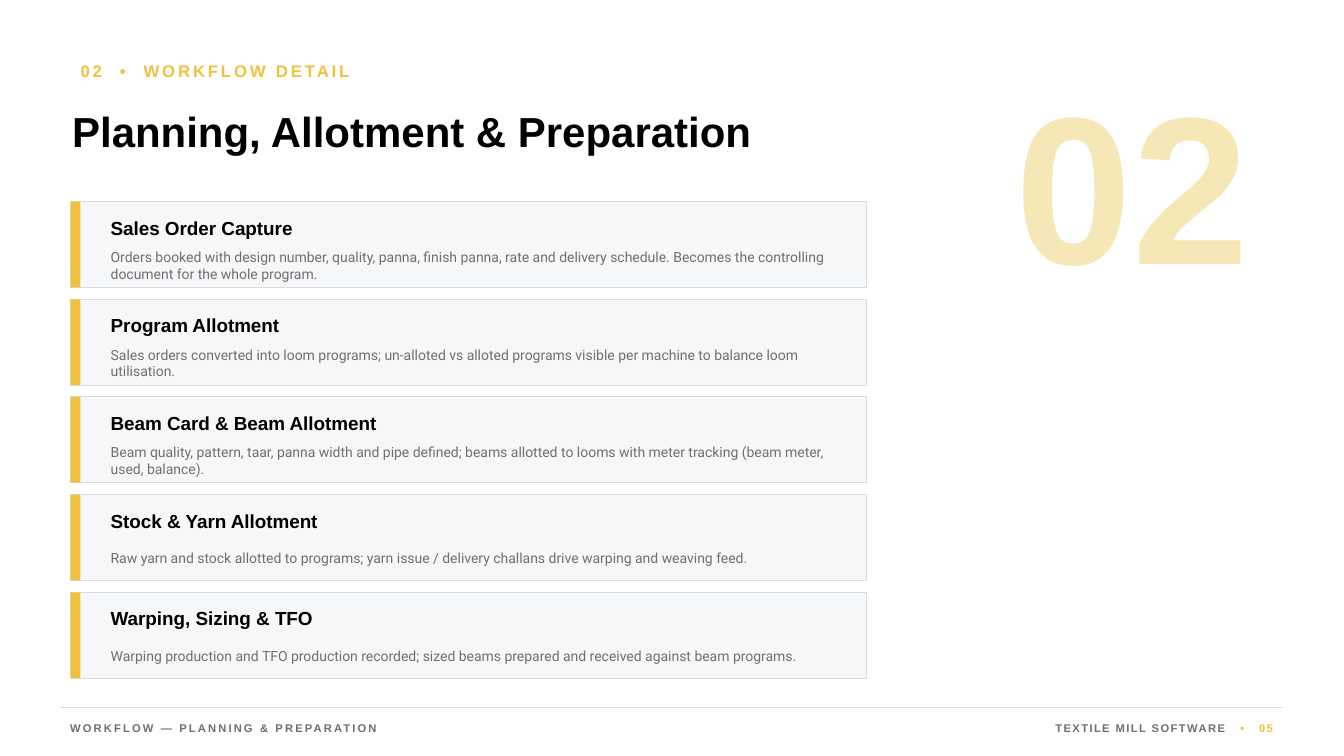
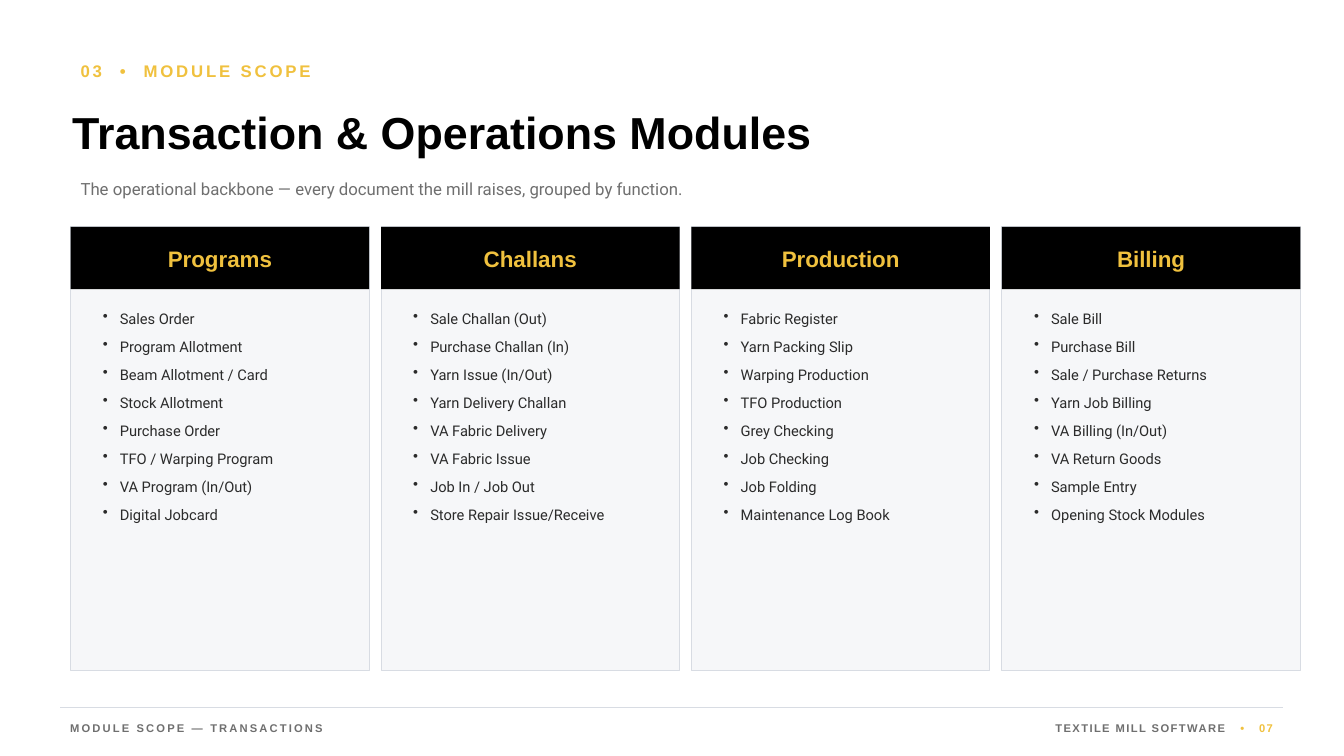
from pptx import Presentation
from pptx.dml.color import RGBColor
from pptx.enum.shapes import MSO_CONNECTOR as CONN, MSO_SHAPE as SHAPE
from pptx.enum.text import MSO_ANCHOR as ANCHOR, PP_ALIGN as ALIGN
from pptx.oxml.ns import qn
from pptx.util import Cm, Pt
from lxml.etree import SubElement

# Shared look
GOLD, PALE_GOLD, BLACK = "F0C13E", "F6E7B7", "000000"
GREY, INK, PANEL, RULE = "6F6F6F", "2B2B2B", "F6F7F9", "D8DCE3"
HEAD, BODY = "Arial", "Roboto"
LEFT, GAP = 1.78, 0.3
DOT_GAP = 7.4  # letter spacing that widens the space beside a dot
PRODUCT = "TEXTILE MILL SOFTWARE"


def rgb(value):
    return RGBColor.from_string(value)


# Building blocks, all lengths in cm
def add_run(p, text, size, color, font=HEAD, bold=True, spacing=0):
    r = p.add_run()
    r.text = text
    r.font.size, r.font.name, r.font.bold = Pt(size), font, bold
    r.font.color.rgb = rgb(color)
    if spacing:
        r.font._element.set("spc", str(round(spacing * 100)))
    return r


def add_dot(p, size, spacing):
    for text, space in ((" ", DOT_GAP), ("•", spacing), (" ", DOT_GAP)):
        add_run(p, text, size, GOLD, spacing=space)


def text_box(s, x, y, w, h, anchor=ANCHOR.MIDDLE, align=ALIGN.LEFT):
    tf = s.shapes.add_textbox(Cm(x), Cm(y), Cm(w), Cm(h)).text_frame
    tf.word_wrap, tf.vertical_anchor = True, anchor
    tf.paragraphs[0].alignment = align
    return tf


def rect(s, x, y, w, h, fill, line=None):
    sp = s.shapes.add_shape(SHAPE.RECTANGLE, Cm(x), Cm(y), Cm(w), Cm(h))
    sp.shadow.inherit = False
    sp.fill.solid()
    sp.fill.fore_color.rgb = rgb(fill)
    if line:
        sp.line.color.rgb, sp.line.width = rgb(line), Pt(0.75)
    else:
        sp.line.fill.background()
    return sp


# Parts on every slide
def header(s, number, section, title, size):
    p = text_box(s, LEFT, 1.4, 27.94, 0.76).paragraphs[0]
    add_run(p, number, 12, GOLD, spacing=2)
    add_dot(p, 12, 2)
    add_run(p, section, 12, GOLD, spacing=2)
    p = text_box(s, 1.57, 2.29, 29.21, 2.03).paragraphs[0]
    add_run(p, title, size, BLACK)


def footer(s, label, page):
    x, right, y = 1.52, 32.33, 17.83
    rule = s.shapes.add_connector(CONN.STRAIGHT, Cm(x), Cm(y), Cm(right), Cm(y))
    rule.line.color.rgb, rule.line.width = rgb(RULE), Pt(0.75)
    SubElement(rule._element.spPr, qn("a:effectLst"))
    p = text_box(s, x, 17.93, 15, 0.81).paragraphs[0]
    add_run(p, label, 8, GREY, spacing=1.5)
    p = text_box(s, right - 15, 17.93, 15, 0.81, align=ALIGN.RIGHT).paragraphs[0]
    add_run(p, PRODUCT, 8, GREY, spacing=1)
    add_dot(p, 8, 1)
    add_run(p, page, 8, GOLD, spacing=1)


# Content regions
def step_card(s, x, y, w, h, title, detail):
    rect(s, x, y, w, h, PANEL, RULE)
    rect(s, x, y, 0.25, h, GOLD)
    p = text_box(s, x + 0.76, y + 0.25, w - 1.27, 0.81).paragraphs[0]
    add_run(p, title, 13.5, BLACK)
    p = text_box(s, x + 0.76, y + 1.07, w - 1.14, 1.07).paragraphs[0]
    p.line_spacing = Pt(12)
    add_run(p, detail, 10, GREY, BODY, False)


def module_column(s, x, y, w, h, title, items):
    rect(s, x, y, w, h, PANEL, RULE)
    tf = rect(s, x, y, w, 1.57, BLACK).text_frame
    tf.vertical_anchor = ANCHOR.MIDDLE
    p = tf.paragraphs[0]
    p.alignment = ALIGN.CENTER
    add_run(p, title, 16, GOLD)
    tf = text_box(s, x + 0.56, y + 1.98, w - 1.02, h - 2.41, ANCHOR.TOP)
    for i, item in enumerate(items):
        p = tf.add_paragraph() if i else tf.paragraphs[0]
        pPr = p._p.get_or_add_pPr()
        pPr.set("marL", str(Cm(0.43)))
        pPr.set("indent", str(-Cm(0.43)))
        SubElement(pPr, qn("a:buChar")).set("char", "•")
        p.line_spacing, p.space_after = Pt(12), Pt(8)
        add_run(p, item, 10.5, INK, BODY, False)


# Slides
def planning_slide(s):
    header(s, "02", "WORKFLOW DETAIL", "Planning, Allotment & Preparation", 30)
    p = text_box(s, 24.13, 1.27, 7.6, 6.55, align=ALIGN.RIGHT).paragraphs[0]
    add_run(p, "02", 150, PALE_GOLD)
    steps = [
        ("Sales Order Capture",
         "Orders booked with design number, quality, panna, finish panna, rate and "
         "delivery schedule. Becomes the controlling document for the whole program."),
        ("Program Allotment",
         "Sales orders converted into loom programs; un-alloted vs alloted programs "
         "visible per machine to balance loom utilisation."),
        ("Beam Card & Beam Allotment",
         "Beam quality, pattern, taar, panna width and pipe defined; beams allotted to "
         "looms with meter tracking (beam meter, used, balance)."),
        ("Stock & Yarn Allotment",
         "Raw yarn and stock allotted to programs; yarn issue / delivery challans drive "
         "warping and weaving feed."),
        ("Warping, Sizing & TFO",
         "Warping production and TFO production recorded; sized beams prepared and "
         "received against beam programs."),
    ]
    top, height = 5.08, 12.01
    h = (height - GAP * (len(steps) - 1)) / len(steps)
    for i, (title, detail) in enumerate(steps):
        step_card(s, LEFT, top + i * (h + GAP), 20.07, h, title, detail)
    footer(s, "WORKFLOW — PLANNING & PREPARATION", "05")


def modules_slide(s):
    header(s, "03", "MODULE SCOPE", "Transaction & Operations Modules", 32)
    p = text_box(s, LEFT, 4.32, 27.94, 0.89).paragraphs[0]
    add_run(p, "The operational backbone — every document the mill raises, "
               "grouped by function.", 12, GREY, BODY, False)
    modules = {
        "Programs": ["Sales Order", "Program Allotment", "Beam Allotment / Card",
                     "Stock Allotment", "Purchase Order", "TFO / Warping Program",
                     "VA Program (In/Out)", "Digital Jobcard"],
        "Challans": ["Sale Challan (Out)", "Purchase Challan (In)",
                     "Yarn Issue (In/Out)", "Yarn Delivery Challan",
                     "VA Fabric Delivery", "VA Fabric Issue", "Job In / Job Out",
                     "Store Repair Issue/Receive"],
        "Production": ["Fabric Register", "Yarn Packing Slip", "Warping Production",
                       "TFO Production", "Grey Checking", "Job Checking",
                       "Job Folding", "Maintenance Log Book"],
        "Billing": ["Sale Bill", "Purchase Bill", "Sale / Purchase Returns",
                    "Yarn Job Billing", "VA Billing (In/Out)", "VA Return Goods",
                    "Sample Entry", "Opening Stock Modules"],
    }
    width = 30.99
    w = (width - GAP * (len(modules) - 1)) / len(modules)
    for i, (title, items) in enumerate(modules.items()):
        module_column(s, LEFT + i * (w + GAP), 5.72, w, 11.18, title, items)
    footer(s, "MODULE SCOPE — TRANSACTIONS", "07")


def main():
    prs = Presentation()
    prs.slide_width, prs.slide_height = Cm(33.87), Cm(19.05)
    for build in (planning_slide, modules_slide):
        build(prs.slides.add_slide(prs.slide_layouts[6]))
    prs.save("out.pptx")


if __name__ == "__main__":
    main()
